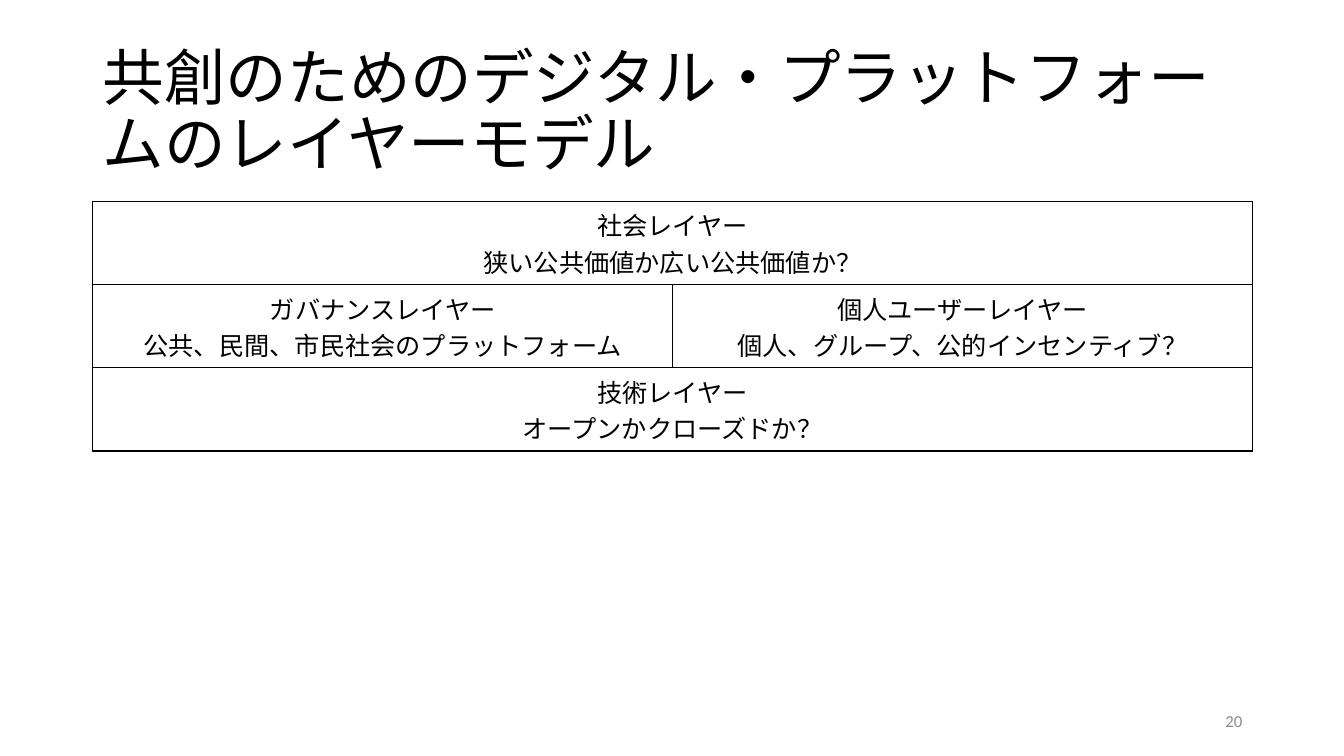
from lxml import etree
from pptx import Presentation
from pptx.dml.color import RGBColor
from pptx.enum.text import MSO_ANCHOR as ANCHOR, PP_ALIGN as ALIGN
from pptx.oxml.ns import qn
from pptx.util import Inches, Pt

W, H = 13.33, 7.5
LEFT, WIDTH = 0.92, 11.5
JP = "Noto Sans CJK JP"
BLACK, GRAY = "000000", "8C8C8C"

# One row per layer level; a single entry spans the whole width
LAYERS = [
    [("社会レイヤー", "狭い公共価値か広い公共価値か？")],
    [("ガバナンスレイヤー", "公共、民間、市民社会のプラットフォーム"),
     ("個人ユーザーレイヤー", "個人、グループ、公的インセンティブ？")],
    [("技術レイヤー", "オープンかクローズドか？")],
]


def color(value):
    return RGBColor.from_string(value)


def write(p, text, size=18, font="Calibri", fill=BLACK, align=ALIGN.LEFT, spacing=None):
    p.alignment = align
    if spacing:
        p.line_spacing = spacing
    r = p.add_run()
    r.text = text
    r.font.size, r.font.name = Pt(size), font
    r.font.color.rgb = color(fill)
    etree.SubElement(r.font._element, qn("a:ea"), typeface=JP)


def add_text(s, box, text, **fmt):
    tf = s.shapes.add_textbox(*map(Inches, box)).text_frame
    tf.word_wrap = True
    tf.vertical_anchor = ANCHOR.MIDDLE
    write(tf.paragraphs[0], text, **fmt)


def add_borders(cell, width=1, fill=BLACK):
    tc_pr = cell._tc.get_or_add_tcPr()
    for i, side in enumerate(("lnL", "lnR", "lnT", "lnB")):
        ln = etree.Element(qn(f"a:{side}"), w=str(Pt(width)))
        solid = etree.SubElement(ln, qn("a:solidFill"))
        etree.SubElement(solid, qn("a:srgbClr"), val=fill)
        tc_pr.insert(i, ln)


def add_layers(s, box, layers):
    rows, cols = len(layers), max(map(len, layers))
    table = s.shapes.add_table(rows, cols, *map(Inches, box)).table
    table.first_row = table.horz_banding = False
    for row, entries in enumerate(layers):
        for col in range(cols):
            cell = table.cell(row, col)
            cell.fill.background()
            add_borders(cell)
        if len(entries) < cols:
            table.cell(row, 0).merge(table.cell(row, cols - 1))
        for col, (name, question) in enumerate(entries):
            tf = table.cell(row, col).text_frame
            write(tf.paragraphs[0], name, align=ALIGN.CENTER)
            write(tf.add_paragraph(), question, align=ALIGN.CENTER)


def build_slide(prs):
    s = prs.slides.add_slide(prs.slide_layouts[6])
    # Title
    add_text(s, (LEFT, 0.4, WIDTH, 1.45), "共創のためのデジタル・プラットフォームのレイヤーモデル",
             size=44, font=JP, spacing=0.9)
    # Layer model
    add_layers(s, (LEFT, 2, WIDTH, 0.33 * H), LAYERS)
    # Slide number
    add_text(s, (LEFT + WIDTH - 3, 6.95, 3, 0.4), "20", size=12, fill=GRAY, align=ALIGN.RIGHT)


def main():
    prs = Presentation()
    prs.slide_width, prs.slide_height = Inches(W), Inches(H)
    build_slide(prs)
    prs.save("out.pptx")


if __name__ == "__main__":
    main()
